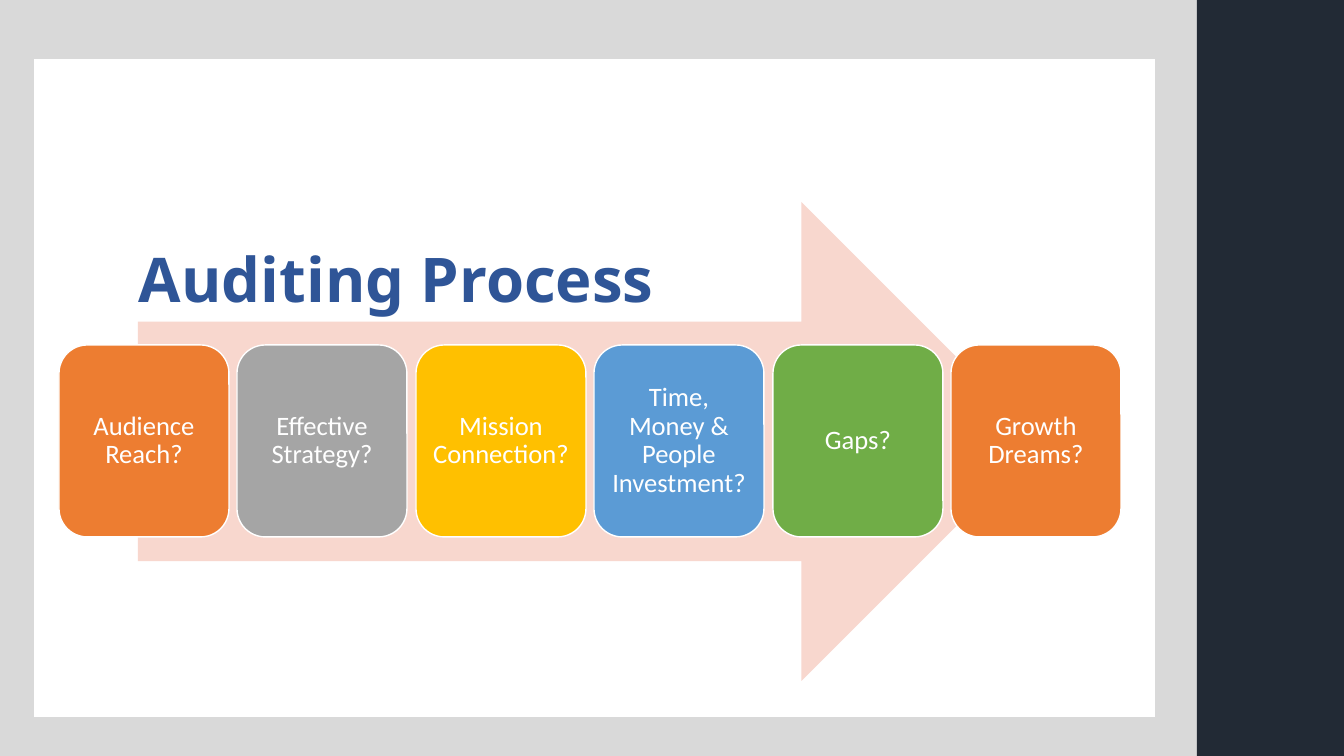
from dataclasses import dataclass

from pptx import Presentation
from pptx.dml.color import RGBColor
from pptx.enum.shapes import MSO_SHAPE as Preset
from pptx.enum.text import MSO_ANCHOR as Anchor, PP_ALIGN as Align
from pptx.util import Emu, Pt

EMU_PER_PX = 914400 / 100.8


def px(length):
    return Emu(round(length * EMU_PER_PX))


@dataclass(frozen=True)
class Theme:
    frame: str = "D9D9D9"
    white: str = "FFFFFF"
    sidebar: str = "222A35"
    title: str = "2F5597"
    arrow: str = "F8D7CE"
    orange: str = "ED7D31"
    gray: str = "A5A5A5"
    gold: str = "FFC000"
    blue: str = "5B9BD5"
    green: str = "70AD47"
    title_font: str = "Noto Sans"
    body_font: str = "Calibri"
    title_size: int = 44
    step_size: int = 19


class SlideBuilder:
    def __init__(self, slide, theme):
        self.slide = slide
        self.theme = theme

    def shape(self, preset, left, top, width, height, fill, outline=None):
        shape = self.slide.shapes.add_shape(
            preset, px(left), px(top), px(width), px(height))
        shape.shadow.inherit = False
        shape.fill.solid()
        shape.fill.fore_color.rgb = RGBColor.from_string(fill)
        if outline:
            shape.line.color.rgb = RGBColor.from_string(outline)
            shape.line.width = Pt(1)
        else:
            shape.line.fill.background()
        return shape

    def set_text(self, shape, text, font_name, size, color, align, bold=False):
        frame = shape.text_frame
        frame.word_wrap = True
        frame.vertical_anchor = Anchor.MIDDLE
        paragraph = frame.paragraphs[0]
        paragraph.text = text
        paragraph.alignment = align
        paragraph.line_spacing = 0.9
        font = paragraph.font
        font.name, font.size, font.bold = font_name, Pt(size), bold
        font.color.rgb = RGBColor.from_string(color)

    def title(self, text, left, top, width, height):
        box = self.slide.shapes.add_textbox(
            px(left), px(top), px(width), px(height))
        self.set_text(box, text, self.theme.title_font, self.theme.title_size,
                      self.theme.title, Align.LEFT, bold=True)

    def step(self, text, left, top, width, height, fill):
        card = self.shape(Preset.ROUNDED_RECTANGLE, left, top, width, height,
                          fill, self.theme.white)
        frame = card.text_frame
        frame.margin_left = frame.margin_right = px(8)
        frame.margin_top = frame.margin_bottom = px(8)
        self.set_text(card, text, self.theme.body_font, self.theme.step_size,
                      self.theme.white, Align.CENTER)


def main():
    presentation = Presentation()
    presentation.slide_width, presentation.slide_height = px(1344), px(756)
    slide = presentation.slides.add_slide(presentation.slide_layouts[6])
    theme = Theme()
    builder = SlideBuilder(slide, theme)

    # Background panels
    builder.shape(Preset.RECTANGLE, 0, 0, 1197, 756, theme.frame)
    builder.shape(Preset.RECTANGLE, 34, 59, 1121, 658, theme.white)
    builder.shape(Preset.RECTANGLE, 1197, 0, 147, 756, theme.sidebar)

    # Title and process arrow
    builder.title("Auditing Process", 129, 219, 1062, 127)
    builder.shape(Preset.RIGHT_ARROW, 138, 202, 903, 479, theme.arrow)

    # Steps, spread evenly from the first card to the last
    steps = [
        ("Audience Reach?", theme.orange),
        ("Effective Strategy?", theme.gray),
        ("Mission Connection?", theme.gold),
        ("Time, Money & People Investment?", theme.blue),
        ("Gaps?", theme.green),
        ("Growth Dreams?", theme.orange),
    ]
    first_left, last_left = 59, 951
    pitch = (last_left - first_left) / (len(steps) - 1)
    for index, (text, fill) in enumerate(steps):
        left = round(first_left + index * pitch)
        builder.step(text, left, 345, 170, 192, fill)

    presentation.save("out.pptx")


if __name__ == "__main__":
    main()
